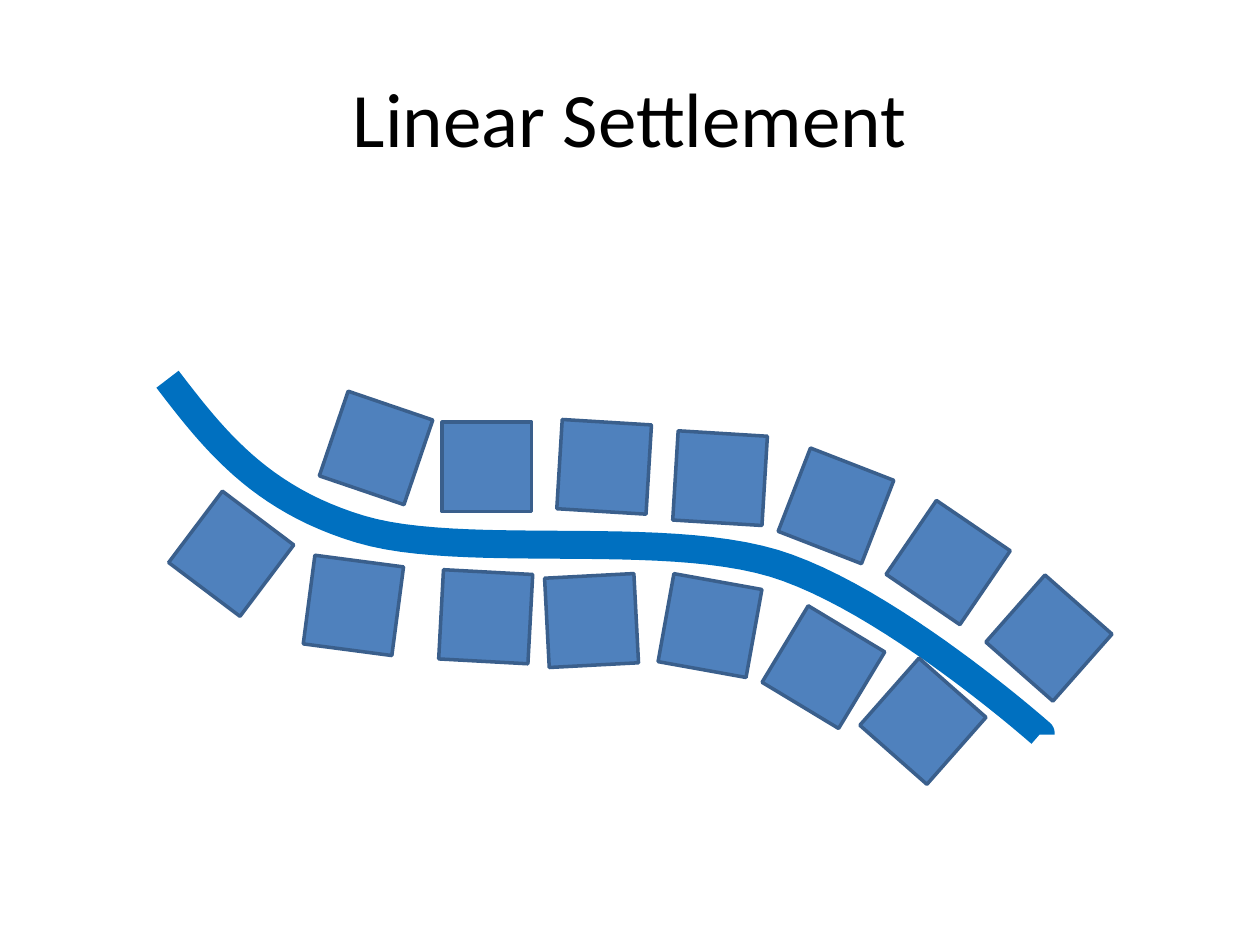
from dataclasses import dataclass

from pptx import Presentation
from pptx.dml.color import RGBColor as Color
from pptx.enum.shapes import MSO_SHAPE as Preset
from pptx.enum.text import MSO_ANCHOR as Anchor, PP_ALIGN as Align
from pptx.util import Inches, Pt

CELL = Inches(0.1)
COLUMNS, ROWS = 100, 75
CURVE_STEPS = 24
HOUSE_SIDE = 7.1


@dataclass(frozen=True)
class Theme:
    font: str = "Calibri"
    title_size: int = 44
    text: str = "000000"
    road: str = "0070C0"
    road_width: int = 16
    house: str = "4F81BD"
    house_edge: str = "3A5F8C"
    house_edge_width: int = 2


@dataclass(frozen=True)
class Box:
    left: float
    top: float
    width: float
    height: float

    def point(self, column, row):
        return round((self.left + column) * CELL), round((self.top + row) * CELL)

    def frame(self):
        return *self.point(0, 0), round(self.width * CELL), round(self.height * CELL)


THEME = Theme()

ROAD_START = (0.3, 0.1)
ROAD_CURVES = [
    ((3.9, 4.8), (7.6, 9.6), (15.6, 12)),
    ((23.6, 14.4), (39.4, 12), (48.4, 14.7)),
    ((57.4, 17.4), (69.6, 28.2), (69.6, 28.2)),
]
ROAD_END = (69.6, 28.3)

NORTH_HOUSES = [
    (13.3, 2, 18.8),
    (22.1, 3.5, 0),
    (31.4, 3.5, 3.5),
    (40.6, 4.4, 3.5),
    (49.8, 6.6, 21.2),
    (58.7, 11.1, 34.3),
    (66.7, 17.1, 41.4),
]
SOUTH_HOUSES = [
    (1.8, 10.4, 37),
    (11.5, 14.5, 7.5),
    (22, 15.4, 3.1),
    (30.4, 15.7, -3),
    (39.8, 16.1, 10.2),
    (48.8, 19.4, 31.1),
    (56.7, 23.7, 41.4),
]


def add_text(slide, box, text, *, size, color, font, align, anchor):
    frame = slide.shapes.add_textbox(*box.frame()).text_frame
    frame.word_wrap = True
    frame.vertical_anchor = anchor
    paragraph = frame.paragraphs[0]
    paragraph.alignment = align
    run = paragraph.add_run()
    run.text = text
    run.font.name = font
    run.font.size = Pt(size)
    run.font.color.rgb = Color.from_string(color)


def style_line(shape, color, width):
    shape.shadow.inherit = False
    shape.line.color.rgb = Color.from_string(color)
    shape.line.width = Pt(width)


def curve_points(start, first, second, end):
    for step in range(1, CURVE_STEPS + 1):
        t = step / CURVE_STEPS
        u = 1 - t
        weights = u**3, 3 * u * u * t, 3 * u * t * t, t**3
        yield tuple(
            sum(weight * value for weight, value in zip(weights, axis))
            for axis in zip(start, first, second, end)
        )


def add_title(slide, box):
    add_text(
        slide, box, "Linear Settlement",
        size=THEME.title_size, color=THEME.text, font=THEME.font,
        align=Align.CENTER, anchor=Anchor.MIDDLE,
    )


def add_road(slide, box):
    points = [ROAD_START]
    for curve in ROAD_CURVES:
        points.extend(curve_points(points[-1], *curve))
    points.append(ROAD_END)
    start, *rest = [box.point(*point) for point in points]
    builder = slide.shapes.build_freeform(*start)
    builder.add_line_segments(rest, close=False)
    road = builder.convert_to_shape()
    road.fill.background()
    style_line(road, THEME.road, THEME.road_width)


def add_houses(slide, box, houses):
    side = round(HOUSE_SIDE * CELL)
    for column, row, angle in houses:
        house = slide.shapes.add_shape(
            Preset.RECTANGLE, *box.point(column, row), side, side
        )
        house.rotation = angle
        house.fill.solid()
        house.fill.fore_color.rgb = Color.from_string(THEME.house)
        style_line(house, THEME.house_edge, THEME.house_edge_width)


def add_settlement(slide, box):
    add_road(slide, box)
    add_houses(slide, box, NORTH_HOUSES)
    add_houses(slide, box, SOUTH_HOUSES)


def main():
    presentation = Presentation()
    presentation.slide_width = COLUMNS * CELL
    presentation.slide_height = ROWS * CELL
    slide = presentation.slides.add_slide(presentation.slide_layouts[6])
    add_title(slide, Box(5, 3, 90, 12.5))
    add_settlement(slide, Box(13, 30, 75, 33))
    presentation.save("out.pptx")


if __name__ == "__main__":
    main()
